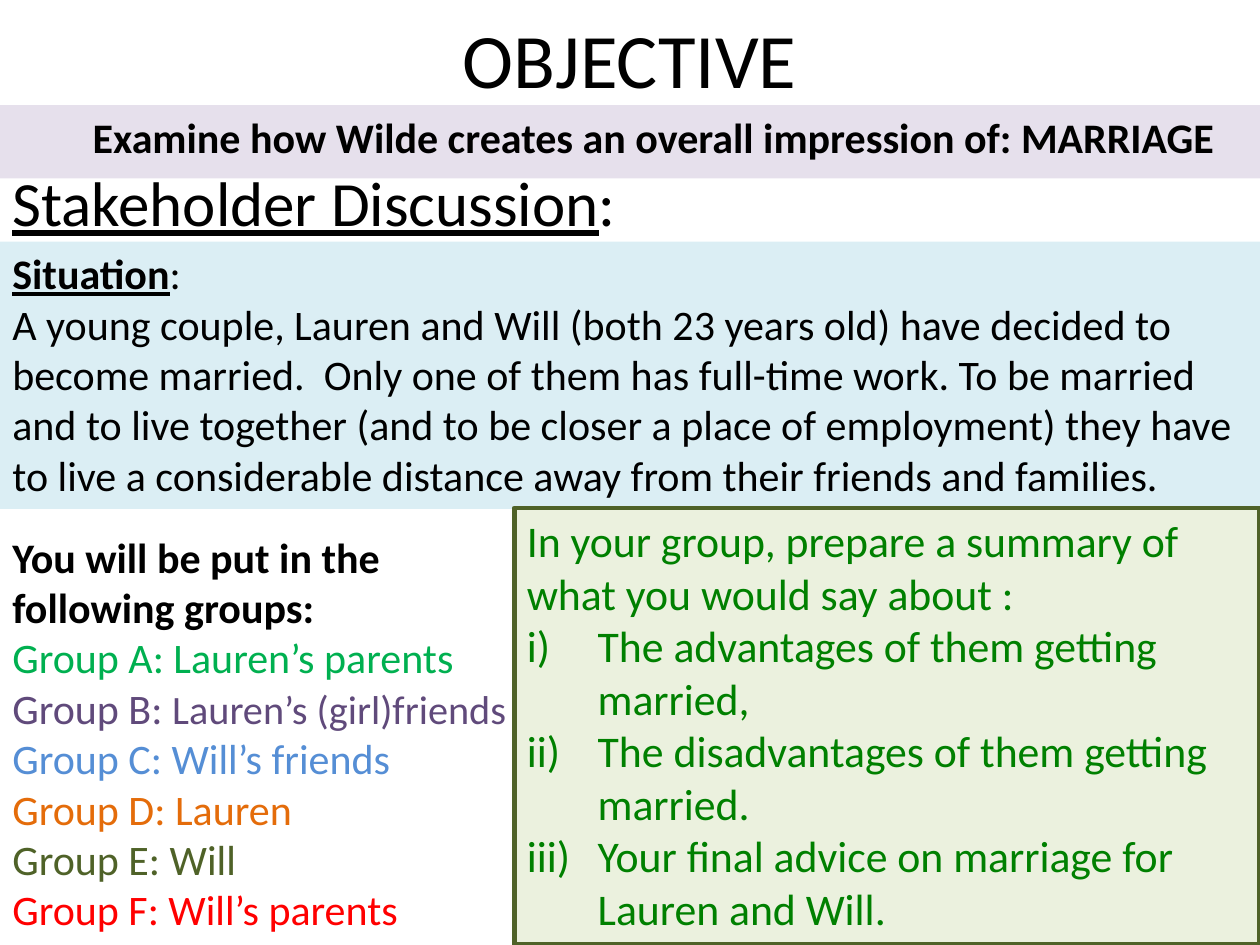
from dataclasses import dataclass

from lxml import etree
from pptx import Presentation
from pptx.dml.color import RGBColor
from pptx.enum import shapes, text
from pptx.oxml.ns import qn
from pptx.util import Cm, Pt


@dataclass(frozen=True)
class Theme:
    font: str = "Calibri"
    title: int = 44
    head: int = 36
    body: int = 24
    small: int = 23
    task: int = 25
    ink: str = "000000"
    lilac: str = "E6E0EC"
    sky: str = "DBEEF4"
    lime: str = "EBF1DE"
    olive: str = "4F6228"
    green: str = "008000"


T = Theme()
CENTER = text.PP_ALIGN.CENTER


def style(run, size=T.body, color=T.ink, bold=False, under=False):
    font = run.font
    font.name, font.size = T.font, Pt(size)
    font.bold, font.underline = bold, under
    font.color.rgb = RGBColor.from_string(color)


def add_tail(para, words, **look):
    run = para.add_run()
    run.text = words
    style(run, **look)


def indent(para, width):
    props = para._p.get_or_add_pPr()
    props.set("marL", str(Cm(width)))
    props.set("indent", str(-Cm(width)))
    return props


def add_area(slide, box, lines, fill=None, **look):
    """Add a text box, or a filled rectangle, with one paragraph per line."""
    place = [Cm(n) for n in box]
    if fill:
        area = slide.shapes.add_shape(shapes.MSO_SHAPE.RECTANGLE, *place)
        area.shadow.inherit = False
        area.fill.solid()
        area.fill.fore_color.rgb = RGBColor.from_string(fill)
        area.line.fill.background()
    else:
        area = slide.shapes.add_textbox(*place)
    frame = area.text_frame
    frame.word_wrap = True
    frame.vertical_anchor = text.MSO_ANCHOR.TOP
    frame.text = "\n".join(lines)
    for para in frame.paragraphs:
        para.alignment = text.PP_ALIGN.LEFT
        style(para.runs[0], **look)
    return area


def add_title(slide, box):
    frame = add_area(slide, box, ["OBJECTIVE"], size=T.title).text_frame
    frame.vertical_anchor = text.MSO_ANCHOR.MIDDLE
    frame.paragraphs[0].alignment = CENTER


def add_aim(slide, box):
    words = "\tExamine how Wilde creates an overall impression of: MARRIAGE"
    area = add_area(slide, box, [words], T.lilac, bold=True)
    para = area.text_frame.paragraphs[0]
    para.alignment = CENTER
    para.space_before = Pt(4.8)
    indent(para, 0.95)


def add_head(slide, box):
    area = add_area(slide, box, ["Stakeholder Discussion"],
                    size=T.head, under=True)
    add_tail(area.text_frame.paragraphs[0], ":", size=T.head)


def add_case(slide, box):
    story = ("A young couple, Lauren and Will (both 23 years old) have decided "
             "to become married.  Only one of them has full-time work. To be "
             "married and to live together (and to be closer a place of "
             "employment) they have to live a considerable distance away from "
             "their friends and families.")
    area = add_area(slide, box, ["Situation", story], T.sky)
    first = area.text_frame.paragraphs[0]
    style(first.runs[0], bold=True, under=True)
    add_tail(first, ":")


def add_groups(slide, box):
    # Group letter, members, colour, size of the members' name
    groups = [
        ("A", "Lauren’s parents", "00B050", T.body),
        ("B", "Lauren’s (girl)friends", "604A7B", T.small),
        ("C", "Will’s friends", "558ED5", T.body),
        ("D", "Lauren", "E46C0A", T.body),
        ("E", "Will", T.olive, T.body),
        ("F", "Will’s parents", "FF0000", T.body),
    ]
    lines = ["You will be put in the following groups:"]
    lines += [f"Group {key}: " for key, *_ in groups]
    intro, *rows = add_area(slide, box, lines).text_frame.paragraphs
    style(intro.runs[0], bold=True)
    for para, (_, who, color, size) in zip(rows, groups):
        style(para.runs[0], color=color)
        add_tail(para, who, size=size, color=color)


def add_task(slide, box):
    lines = [
        "In your group, prepare a summary of what you would say about :",
        "The advantages of them getting married,",
        "The disadvantages of them getting married.",
        "Your final advice on marriage for Lauren and Will.",
    ]
    area = add_area(slide, box, lines, T.lime, size=T.task, color=T.green)
    area.line.color.rgb = RGBColor.from_string(T.olive)
    area.line.width = Pt(2.75)
    for para in area.text_frame.paragraphs[1:]:
        props = indent(para, 1.43)
        etree.SubElement(props, qn("a:buFont"), typeface="+mj-lt")
        etree.SubElement(props, qn("a:buAutoNum"), type="romanLcParenR")


def main():
    deck = Presentation()
    deck.slide_width, deck.slide_height = Cm(25.4), Cm(19.05)
    slide = deck.slides.add_slide(deck.slide_layouts[6])

    # Full-width bands, top to bottom
    add_title(slide, (1.27, -0.43, 22.86, 3.18))
    add_aim(slide, (0, 2.12, 25.4, 1.48))
    add_head(slide, (0, 3.18, 17.78, 1.8))
    add_case(slide, (0, 4.87, 25.4, 5.39))

    # Groups on the left, task on the right
    add_groups(slide, (0, 10.58, 11, 8.47))
    add_task(slide, (10.37, 10.24, 15.03, 8.81))

    deck.save("out.pptx")


if __name__ == "__main__":
    main()
